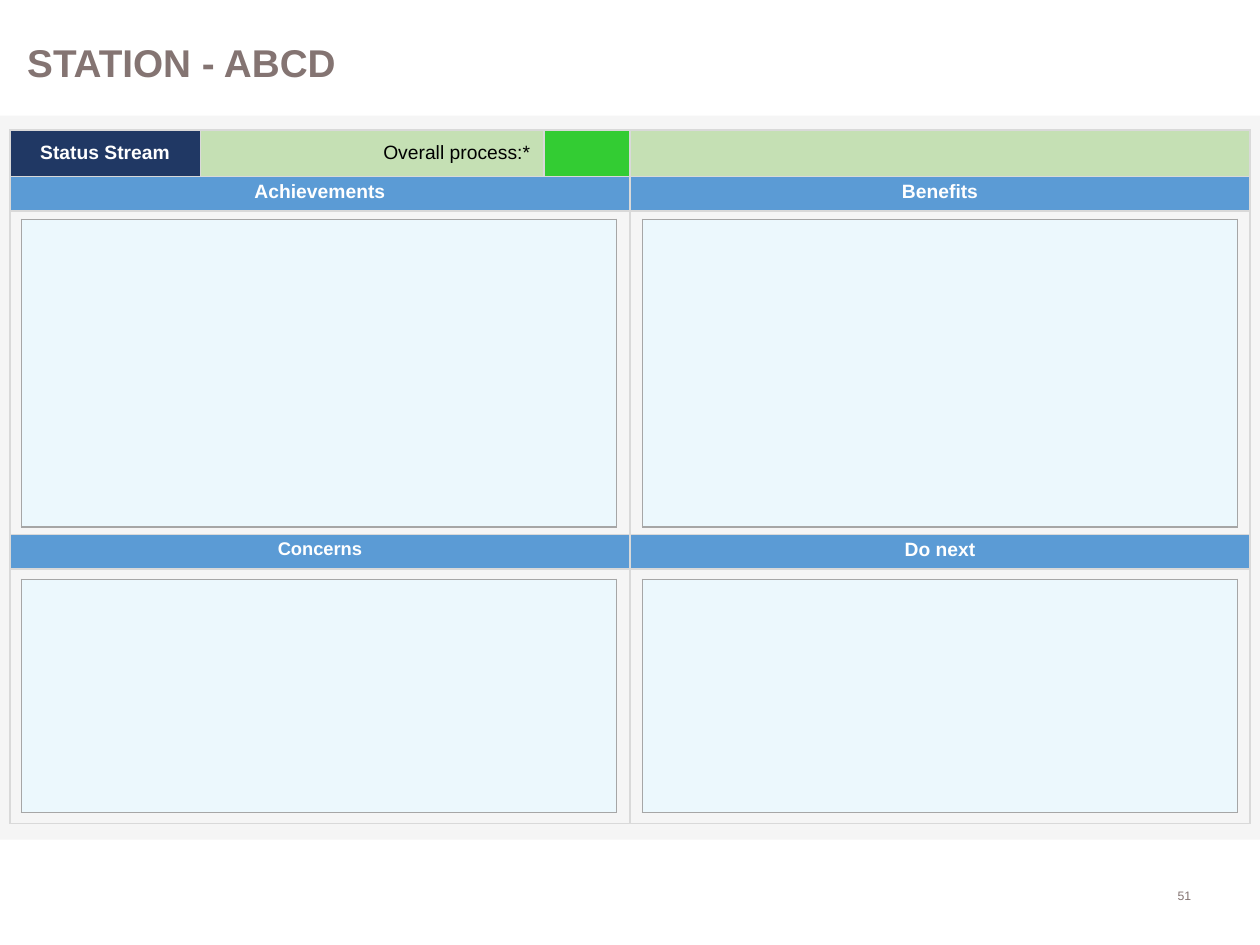
from lxml import etree
from pptx import Presentation
from pptx import util as u
from pptx.dml.color import RGBColor
from pptx.enum import shapes, text
from pptx.oxml import ns

C = {
    "title": "847472", "band": "000000", "navy": "203864", "green": "C5E0B4",
    "status": "33CC33", "blue": "5B9BD5", "panel": "ECF8FD", "white": "FFFFFF",
    "black": "000000", "grid": "D9D9D9", "edge": "A6A6A6",
}
AL = text.PP_ALIGN


def add_text(tf, words, size, color, bold=False, align=AL.LEFT, spacing=0.9):
    p = tf.paragraphs[0]
    p.alignment = align
    p.line_spacing = spacing
    r = p.add_run()
    r.text = words
    r.font.name = "Arial"
    r.font.size = u.Pt(size)
    r.font.bold = bold
    r.font.color.rgb = RGBColor.from_string(C[color])


def add_grid(s, left, top, cols, rows, border):
    frame = s.shapes.add_table(len(rows), len(cols), u.Cm(left), u.Cm(top),
                               u.Cm(sum(cols)), u.Cm(sum(rows)))
    tbl = frame.table
    tbl.first_row = tbl.horz_banding = False
    for col, width in zip(tbl.columns, cols):
        col.width = u.Cm(width)
    for row, height in zip(tbl.rows, rows):
        row.height = u.Cm(height)
    for cell in tbl.iter_cells():
        cell.fill.background()
        cell.margin_left = cell.margin_right = u.Cm(0.28)
        cell.margin_top = cell.margin_bottom = u.Cm(0.13)
        p = cell.text_frame.paragraphs[0]
        etree.SubElement(p._p, ns.qn("a:endParaRPr"), sz="1100")
        tcPr = cell._tc.get_or_add_tcPr()
        for i, side in enumerate(("lnL", "lnR", "lnT", "lnB")):
            ln = etree.Element(ns.qn("a:" + side), w=str(u.Pt(1)))
            fill = etree.SubElement(ln, ns.qn("a:solidFill"))
            etree.SubElement(fill, ns.qn("a:srgbClr"), val=C[border])
            tcPr.insert(i, ln)
    return tbl


prs = Presentation()
prs.slide_width, prs.slide_height = u.Cm(25.4), u.Cm(19.05)
s = prs.slides.add_slide(prs.slide_layouts[6])

band = s.shapes.add_shape(shapes.MSO_SHAPE.RECTANGLE, 0, u.Cm(2.33), prs.slide_width, u.Cm(14.6))
band.shadow.inherit = False
band.line.fill.background()
band.fill.solid()
band.fill.fore_color.rgb = RGBColor.from_string(C["band"])
etree.SubElement(band._element.spPr.find(".//" + ns.qn("a:srgbClr")), ns.qn("a:alpha"), val="4000")

title = s.shapes.add_textbox(u.Cm(0.3), u.Cm(0.33), u.Cm(21.9), u.Cm(1.98))
title.text_frame.word_wrap = True
title.text_frame.vertical_anchor = text.MSO_ANCHOR.MIDDLE
add_text(title.text_frame, "STATION - ABCD", 22.1, "title", bold=True)

number = s.shapes.add_textbox(u.Cm(22.2), u.Cm(17.78), u.Cm(2.06), u.Cm(0.56))
number.text_frame.word_wrap = True
add_text(number.text_frame, "51", 7, "title", align=AL.RIGHT, spacing=1.0)

tbl = add_grid(s, 0.2, 2.62, [3.84, 6.93, 1.73, 12.5], [0.94, 0.69, 6.53, 0.69, 5.13], "grid")
for row in range(1, 5):
    tbl.cell(row, 0).merge(tbl.cell(row, 2))

for col, fill in enumerate(("navy", "green", "status", "green")):
    cell = tbl.cell(0, col)
    cell.fill.solid()
    cell.fill.fore_color.rgb = RGBColor.from_string(C[fill])
    cell.vertical_anchor = text.MSO_ANCHOR.MIDDLE
add_text(tbl.cell(0, 0).text_frame, "Status Stream", 11, "white", True, AL.CENTER)
add_text(tbl.cell(0, 1).text_frame, "Overall process:*", 11, "black", align=AL.RIGHT)

headings = [(1, 0, "Achievements", 11), (1, 3, "Benefits", 11),
            (3, 0, "Concerns", 10.5), (3, 3, "Do next", 11)]
for row, col, words, size in headings:
    cell = tbl.cell(row, col)
    cell.fill.solid()
    cell.fill.fore_color.rgb = RGBColor.from_string(C["blue"])
    add_text(cell.text_frame, words, size, "white", True, AL.CENTER)

for top, height in ((4.42, 6.2), (11.68, 4.7)):
    for left in (0.43, 12.95):
        cell = add_grid(s, left, top, [12], [height], "edge").cell(0, 0)
        cell.fill.solid()
        cell.fill.fore_color.rgb = RGBColor.from_string(C["panel"])

prs.save("out.pptx")
